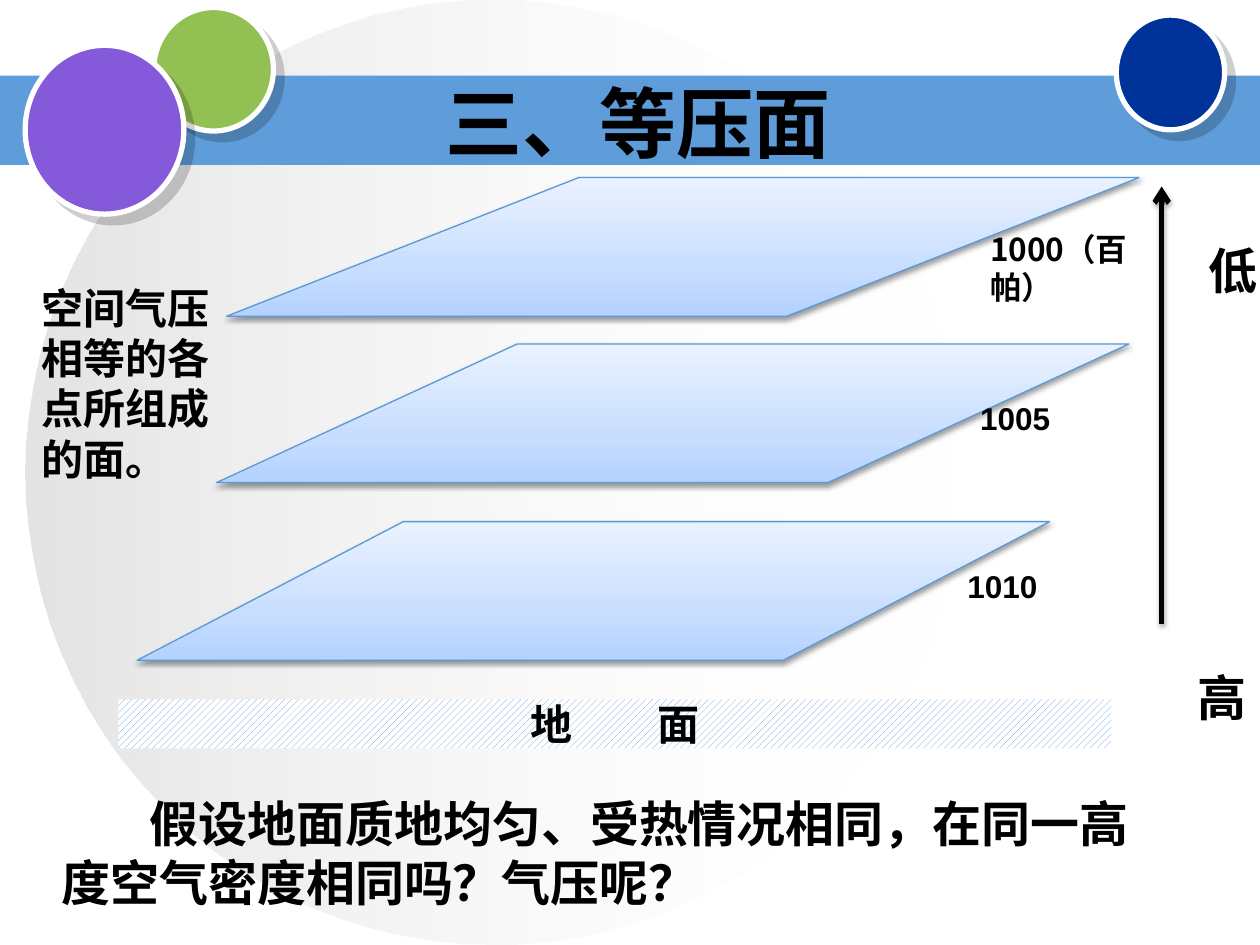
"""Builds a slide on isobaric surfaces stacked above level ground."""
from lxml import etree
from pptx import Presentation
from pptx.dml.color import RGBColor
from pptx.enum.dml import MSO_PATTERN
from pptx.enum.shapes import MSO_CONNECTOR, MSO_SHAPE
from pptx.enum.text import MSO_ANCHOR, MSO_AUTO_SIZE, PP_ALIGN
from pptx.oxml.ns import qn
from pptx.util import Inches, Pt

ELLIPSE = MSO_SHAPE.OVAL
RECTANGLE = MSO_SHAPE.RECTANGLE
PARALLELOGRAM = MSO_SHAPE.PARALLELOGRAM
STRAIGHT = MSO_CONNECTOR.STRAIGHT
DIAGONAL = MSO_PATTERN.WIDE_UPWARD_DIAGONAL
MIDDLE = MSO_ANCHOR.MIDDLE
TOP = MSO_ANCHOR.TOP
CENTER = PP_ALIGN.CENTER
GROW = MSO_AUTO_SIZE.SHAPE_TO_FIT_TEXT

BLACK = RGBColor(0x00, 0x00, 0x00)
WHITE = RGBColor(0xFF, 0xFF, 0xFF)
SILVER = RGBColor(0xC0, 0xC0, 0xC0)
BAND_BLUE = RGBColor(0x5E, 0x9C, 0xDA)
EDGE_BLUE = RGBColor(0x59, 0x99, 0xD8)
GREEN = RGBColor(0x93, 0xC0, 0x52)
NAVY = RGBColor(0x00, 0x33, 0x99)
PURPLE = RGBColor(0x85, 0x5A, 0xDA)
SURFACE_STOPS = [
    (0, RGBColor(0xB3, 0xD2, 0xFF), 100),
    (35, RGBColor(0xC9, 0xDE, 0xFF), 100),
    (100, RGBColor(0xEA, 0xF2, 0xFF), 100),
]
BACKDROP_STOPS = [(0, SILVER, 44), (100, WHITE, 0)]
LATIN = "Arial"
CHINESE = "Noto Sans CJK SC"


def add_color(parent, color, alpha):
    """Append a colour with an opacity in percent."""
    element = etree.SubElement(parent, qn("a:srgbClr"), val=str(color))
    etree.SubElement(element, qn("a:alpha"), val=str(alpha * 1000))


def add_shadow(effects, alpha, blur, distance, angle):
    """Append an outer black shadow to an effect list."""
    shadow = etree.SubElement(
        effects, qn("a:outerShdw"), blurRad=str(Pt(blur)), dist=str(Pt(distance)),
        dir=str(angle * 60000), algn="ctr", rotWithShape="0")
    add_color(shadow, BLACK, alpha)


class SlideBuilder:
    """Holds the text style and the current slide."""

    def __init__(self, slide):
        self.slide = slide
        self.color = BLACK

    def shape(self, kind, box, fill=None, line=None, line_width=1, shadow=None):
        """Add a preset shape with an optional outline and shadow."""
        shape = self.slide.shapes.add_shape(kind, *map(Inches, box))
        if fill is not None:
            shape.fill.solid()
            shape.fill.fore_color.rgb = fill
        if line is None:
            shape.line.fill.background()
        else:
            shape.line.color.rgb = line
            shape.line.width = Pt(line_width)
        shape.shadow.inherit = False
        if shadow:
            add_shadow(shape._element.spPr.find(qn("a:effectLst")), *shadow)
        return shape

    def gradient(self, shape, stops, angle):
        """Fill a shape with a linear gradient."""
        shape.fill.gradient()
        shape.fill.gradient_angle = angle
        stop_list = shape._element.spPr.find(qn("a:gradFill")).find(qn("a:gsLst"))
        for stop in list(stop_list):
            stop_list.remove(stop)
        for position, color, alpha in stops:
            stop = etree.SubElement(stop_list, qn("a:gs"), pos=str(position * 1000))
            add_color(stop, color, alpha)

    def ball(self, box, fill):
        """Add a white-rimmed ball."""
        self.shape(ELLIPSE, box, fill, WHITE, 3, (19, 0, 7.1, 45))

    def surface(self, box, slant):
        """Add a slanted isobaric surface."""
        shape = self.shape(PARALLELOGRAM, box, None, EDGE_BLUE, 0.75, (38, 3.1, 1.6, 90))
        shape.adjustments[0] = slant
        self.gradient(shape, SURFACE_STOPS, 90)

    def run(self, paragraph, text, size, font=LATIN, spacing=None):
        """Add one bold run."""
        run = paragraph.add_run()
        run.text = text
        run.font.size = Pt(size)
        run.font.bold = True
        run.font.name = font
        run.font.color.rgb = self.color
        properties = run._r.get_or_add_rPr()
        etree.SubElement(properties, qn("a:ea"), typeface=CHINESE)
        if spacing is not None:
            properties.set("spc", str(spacing * 100))

    def text(self, box, text, size, font=CHINESE, wrap=True, anchor=TOP, indent=0):
        """Add a text box with one paragraph."""
        frame = self.slide.shapes.add_textbox(*map(Inches, box)).text_frame
        frame.word_wrap = wrap
        frame.auto_size = GROW
        frame.vertical_anchor = anchor
        paragraph = frame.paragraphs[0]
        if indent:
            paragraph._p.get_or_add_pPr().set("indent", str(Inches(indent)))
        self.run(paragraph, text, size, font)

    def arrow(self, start, end):
        """Add a thick arrow."""
        connector = self.slide.shapes.add_connector(STRAIGHT, *map(Inches, start + end))
        connector.line.color.rgb = BLACK
        connector.line.width = Pt(3)
        etree.SubElement(connector.line._get_or_add_ln(), qn("a:tailEnd"), type="arrow")
        effects = etree.SubElement(connector._element.spPr, qn("a:effectLst"))
        add_shadow(effects, 35, 3.1, 1.8, 90)

    def ground(self, box):
        """Add the hatched ground with its spaced label."""
        shape = self.shape(RECTANGLE, box)
        shape.fill.patterned()
        shape.fill.pattern = DIAGONAL
        shape.fill.fore_color.rgb = BAND_BLUE
        shape.fill.back_color.rgb = WHITE
        frame = shape.text_frame
        frame.word_wrap = False
        frame.vertical_anchor = MIDDLE
        paragraph = frame.paragraphs[0]
        paragraph.alignment = CENTER
        for text, spacing in (("地", None), (" ", 43), ("面", None)):
            self.run(paragraph, text, 24, spacing=spacing)


def main():
    """Build and save the slide."""
    presentation = Presentation()
    presentation.slide_width = Inches(10)
    presentation.slide_height = Inches(7.5)
    builder = SlideBuilder(presentation.slides.add_slide(presentation.slide_layouts[6]))

    backdrop = builder.shape(ELLIPSE, (0.2, 0, 7.44, 7.5))
    builder.gradient(backdrop, BACKDROP_STOPS, 0)
    builder.shape(RECTANGLE, (0, 0.6, 10, 0.71), BAND_BLUE)
    builder.ball((1.22, 0.06, 0.95, 0.98), GREEN)
    builder.ball((8.86, 0.12, 0.86, 0.91), NAVY)
    builder.ball((0.2, 0.36, 1.26, 1.34), PURPLE)

    builder.arrow((9.22, 4.95), (9.22, 1.48))
    builder.text((9.41, 5.25, 0.87, 0.57), "高", 28)
    builder.text((9.49, 1.86, 0.87, 0.57), "低", 28)
    builder.ground((0.94, 5.55, 7.88, 0.39))

    levels = [
        (1.09, 4.14, 1.92, "1010", (7.58, 4.45, 0.86, 0.4), LATIN),
        (1.72, 2.73, 2.17, "1005", (7.68, 3.12, 1.41, 0.4), LATIN),
        (1.8, 1.41, 2.54, "1000（百帕）", (7.76, 1.78, 1.5, 0.4), CHINESE),
    ]
    for left, top, slant, label, label_box, font in levels:
        builder.surface((left, top, 7.24, 1.1), slant)
        builder.text(label_box, label, 18, font)

    builder.text((3.44, 0.55, 3.29, 0.84), "三、等压面", 44, wrap=False)
    builder.text((0.39, 6.25, 8.98, 1.03),
                 "假设地面质地均匀、受热情况相同，在同一高度空气密度相同吗？气压呢？",
                 28, LATIN, anchor=MIDDLE, indent=0.7)
    builder.text((0.23, 2.19, 1.64, 1.72), "空间气压相等的各点所组成的面。", 24)
    presentation.save("out.pptx")


if __name__ == "__main__":
    main()
